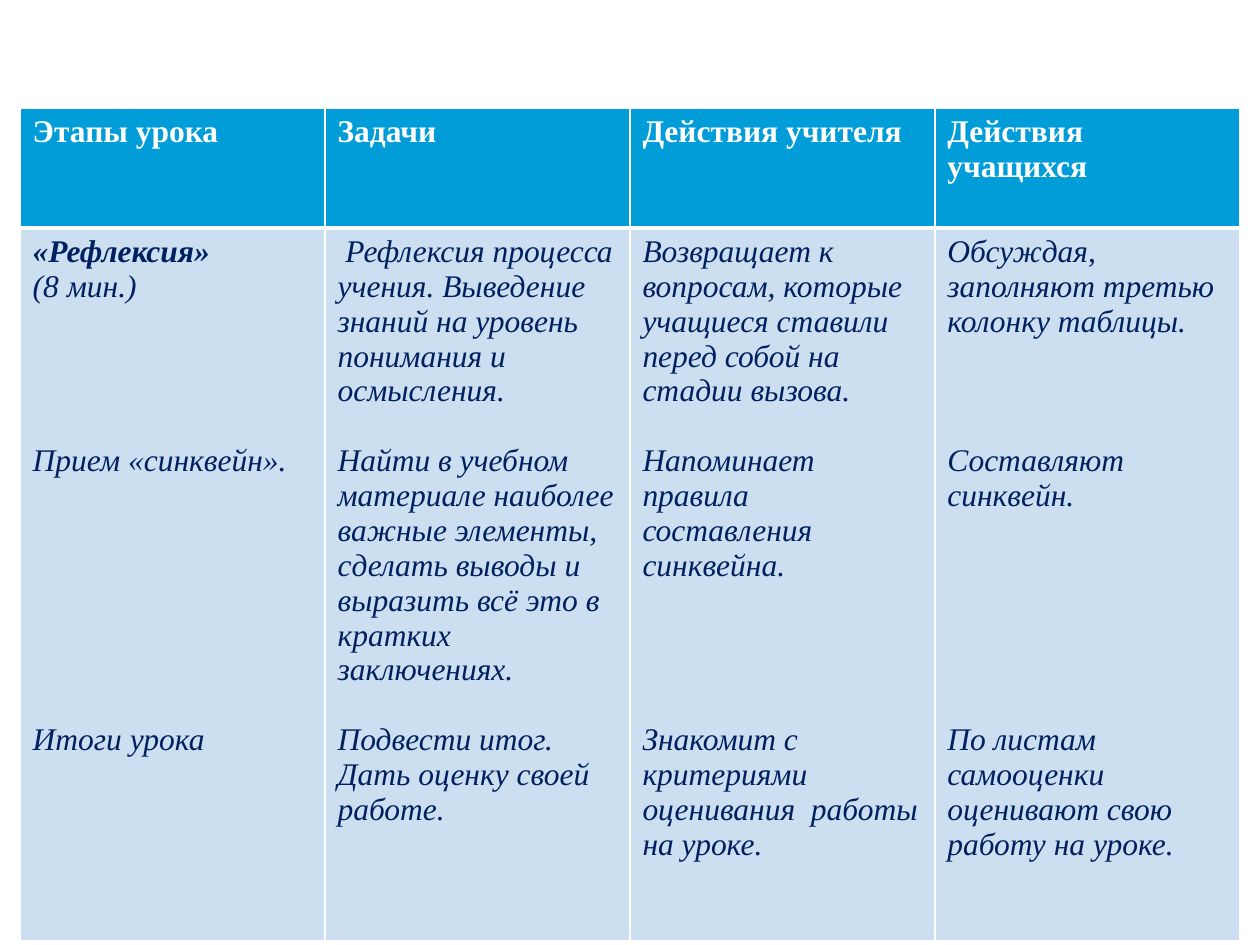
import pptx
import pptx.dml.color
import pptx.oxml
import pptx.oxml.ns
import pptx.util
from pptx.util import Inches

FONT = "Times New Roman"
SIZE = 18
LINE = 19.93
WHITE, NAVY = "FFFFFF", "002060"
HEADER_FILL, BODY_FILL = "009DD9", "CCDFF1"

HEADINGS = ["Этапы урока", "Задачи", "Действия учителя", "Действия учащихся"]

# Each entry is a paragraph and the number of lines left free above it.
STAGES = [
    ("«Рефлексия»", 0),
    ("(8 мин.)", 0),
    ("Прием «синквейн».", 4),
    ("Итоги урока", 7),
]
TASKS = [
    (" Рефлексия процесса учения. Выведение знаний на уровень понимания и осмысления.", 0),
    ("Найти в учебном материале наиболее важные элементы, сделать выводы "
     "и выразить всё это в кратких заключениях.", 1),
    ("Подвести итог. Дать оценку своей работе.", 1),
]
TEACHER_ACTIONS = [
    ("Возвращает к вопросам, которые учащиеся ставили перед собой на стадии вызова.", 0),
    ("Напоминает правила составления синквейна.", 1),
    ("Знакомит с критериями оценивания  работы на уроке.", 4),
]
PUPIL_ACTIONS = [
    ("Обсуждая, заполняют третью колонку таблицы.", 0),
    ("Составляют синквейн.", 3),
    ("По листам самооценки оценивают свою работу на уроке.", 6),
]


def color(value):
    return pptx.dml.color.RGBColor.from_string(value)


def add_borders(cell, **widths):
    properties = cell._tc.get_or_add_tcPr()
    for side in "LRTB":
        width = pptx.util.Pt(widths.get(side, 1))
        properties.append(pptx.oxml.parse_xml(
            f'<a:ln{side} {pptx.oxml.ns.nsdecls("a")} w="{width}"><a:solidFill>'
            f'<a:srgbClr val="{WHITE}"/></a:solidFill></a:ln{side}>'))


def paint(cell, fill, **widths):
    add_borders(cell, **widths)
    cell.fill.solid()
    cell.fill.fore_color.rgb = color(fill)


def write(cell, entries, text_color, bold=False, italic=False):
    frame = cell.text_frame
    for index, (text, free_lines) in enumerate(entries):
        paragraph = frame.paragraphs[0] if index == 0 else frame.add_paragraph()
        paragraph.text = text
        if free_lines:
            paragraph.space_before = pptx.util.Pt(round(free_lines * LINE, 1))
        font = paragraph.font
        font.name, font.size = FONT, pptx.util.Pt(SIZE)
        font.bold, font.italic = bold, italic
        font.color.rgb = color(text_color)


def add_lesson_table(slide):
    columns = [STAGES, TASKS, TEACHER_ACTIONS, PUPIL_ACTIONS]
    lesson = slide.shapes.add_table(
        2, len(columns), Inches(0.16), Inches(0.86), Inches(9.68), Inches(6.61)).table
    lesson.rows[0].height = Inches(0.95)
    lesson.rows[1].height = Inches(5.66)
    for index, (heading, entries) in enumerate(zip(HEADINGS, columns)):
        lesson.columns[index].width = Inches(2.42)
        header, body = lesson.cell(0, index), lesson.cell(1, index)
        paint(header, HEADER_FILL, B=3)
        paint(body, BODY_FILL, T=3)
        write(header, [(heading, 0)], WHITE, bold=True)
        write(body, entries, NAVY, italic=True)
    lesson.cell(1, 0).text_frame.paragraphs[0].font.bold = True


def main():
    deck = pptx.Presentation()
    deck.slide_width, deck.slide_height = Inches(10), Inches(7.5)
    slide = deck.slides.add_slide(deck.slide_layouts[6])
    add_lesson_table(slide)
    deck.save("out.pptx")


if __name__ == "__main__":
    main()
